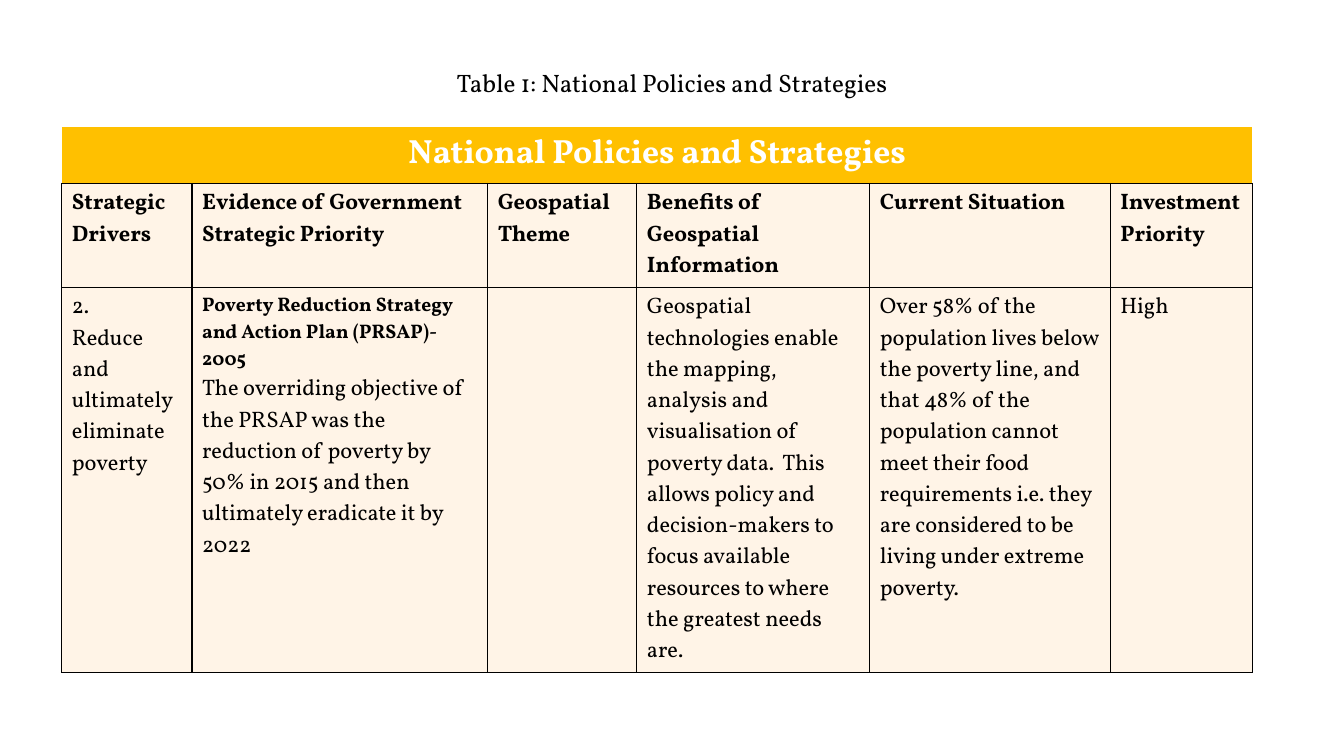
import pptx
import pptx.dml.color
import pptx.enum.text
import pptx.oxml
import pptx.oxml.ns
import pptx.util

Cm = pptx.util.Cm
Pt = pptx.util.Pt
PP_ALIGN = pptx.enum.text.PP_ALIGN
MSO_ANCHOR = pptx.enum.text.MSO_ANCHOR

BLACK, WHITE, GOLD, CREAM = "000000", "FFFFFF", "FFC000", "FFF4E7"

COL_WIDTHS = [3.28, 7.45, 3.76, 5.87, 6.06, 3.58]
ROW_HEIGHTS = [1.4, 2.6, 9.7]
BANNER = "National Policies and Strategies"
HEADINGS = [
    "Strategic Drivers",
    "Evidence of Government Strategic Priority",
    "Geospatial Theme",
    "Benefits of Geospatial Information",
    "Current Situation",
    "Investment Priority",
]
DRIVER = [
    [("2.", 16, False), ("Reduce and ultimately eliminate poverty", 16, False)],
    [
        ("Poverty Reduction Strategy and Action Plan (PRSAP)- 2005", 14, True),
        ("The overriding objective of the PRSAP was the reduction of poverty by 50% "
         "in 2015 and then ultimately eradicate it by 2022", 16, False),
    ],
    [],
    [("Geospatial technologies enable the mapping, analysis and  visualisation of "
      "poverty data.  This allows policy and decision-makers to focus available "
      "resources to where the greatest needs are.", 16, False)],
    [("Over 58% of the population lives below the poverty line, and that 48% of the "
      "population cannot meet their food requirements i.e. they are considered to be "
      "living under extreme poverty.", 16, False)],
    [("High", 16, False)],
]


def rgb(value):
    return pptx.dml.color.RGBColor.from_string(value)


class Deck:
    font = "Vollkorn"

    def __init__(self, prs):
        self.s = prs.slides.add_slide(prs.slide_layouts[5])

    def add_text(self, tf, lines, color=BLACK, align=PP_ALIGN.LEFT, spacing=1.0):
        for i, (text, size, bold) in enumerate(lines):
            p = tf.add_paragraph() if i else tf.paragraphs[0]
            p.alignment = align
            p.line_spacing = spacing
            r = p.add_run()
            r.text = text
            r.font.name = self.font
            r.font.size = Pt(size)
            r.font.bold = bold
            r.font.color.rgb = rgb(color)

    def title(self, text, left, top, width, height):
        sp = self.s.shapes.title
        sp.left, sp.top, sp.width, sp.height = Cm(left), Cm(top), Cm(width), Cm(height)
        tf = sp.text_frame
        tf.word_wrap = True
        tf.vertical_anchor = MSO_ANCHOR.MIDDLE
        self.add_text(tf, [(text, 18, False)], align=PP_ALIGN.CENTER, spacing=0.9)

    def table(self, left, top, widths, heights):
        frame = self.s.shapes.add_table(
            len(heights), len(widths), Cm(left), Cm(top), Cm(sum(widths)), Cm(sum(heights)))
        tbl = frame.table
        tbl.first_row = tbl.horz_banding = False
        for col, width in zip(tbl.columns, widths):
            col.width = Cm(width)
        for row, height in zip(tbl.rows, heights):
            row.height = Cm(height)
        return tbl

    def cell(self, cell, lines, fill, edges, color=BLACK, align=PP_ALIGN.LEFT):
        tc_pr = cell._tc.get_or_add_tcPr()
        for side, edge in zip("LRTB", edges):
            tc_pr.append(pptx.oxml.parse_xml(
                f'<a:ln{side} {pptx.oxml.ns.nsdecls("a")} w="{Pt(1)}"><a:solidFill>'
                f'<a:srgbClr val="{edge}"/></a:solidFill></a:ln{side}>'))
        cell.fill.solid()
        cell.fill.fore_color.rgb = rgb(fill)
        self.add_text(cell.text_frame, lines, color, align)


def main():
    prs = pptx.Presentation()
    prs.slide_width, prs.slide_height = Cm(33.87), Cm(19.05)
    deck = Deck(prs)
    deck.title("Table 1: National Policies and Strategies", 2.33, 0.85, 29.21, 2.54)
    tbl = deck.table(1.56, 3.19, COL_WIDTHS, ROW_HEIGHTS)

    tbl.cell(0, 0).merge(tbl.cell(0, len(COL_WIDTHS) - 1))
    for c in range(len(COL_WIDTHS)):
        lines = [] if c else [(BANNER, 24, True)]
        deck.cell(tbl.cell(0, c), lines, GOLD, [WHITE, WHITE, WHITE, BLACK],
                  WHITE, PP_ALIGN.CENTER)

    body = [[[(text, 16, True)] for text in HEADINGS], DRIVER]
    for r, row in enumerate(body, start=1):
        for c, lines in enumerate(row):
            deck.cell(tbl.cell(r, c), lines, CREAM, [BLACK] * 4)

    prs.save("out.pptx")


if __name__ == "__main__":
    main()
